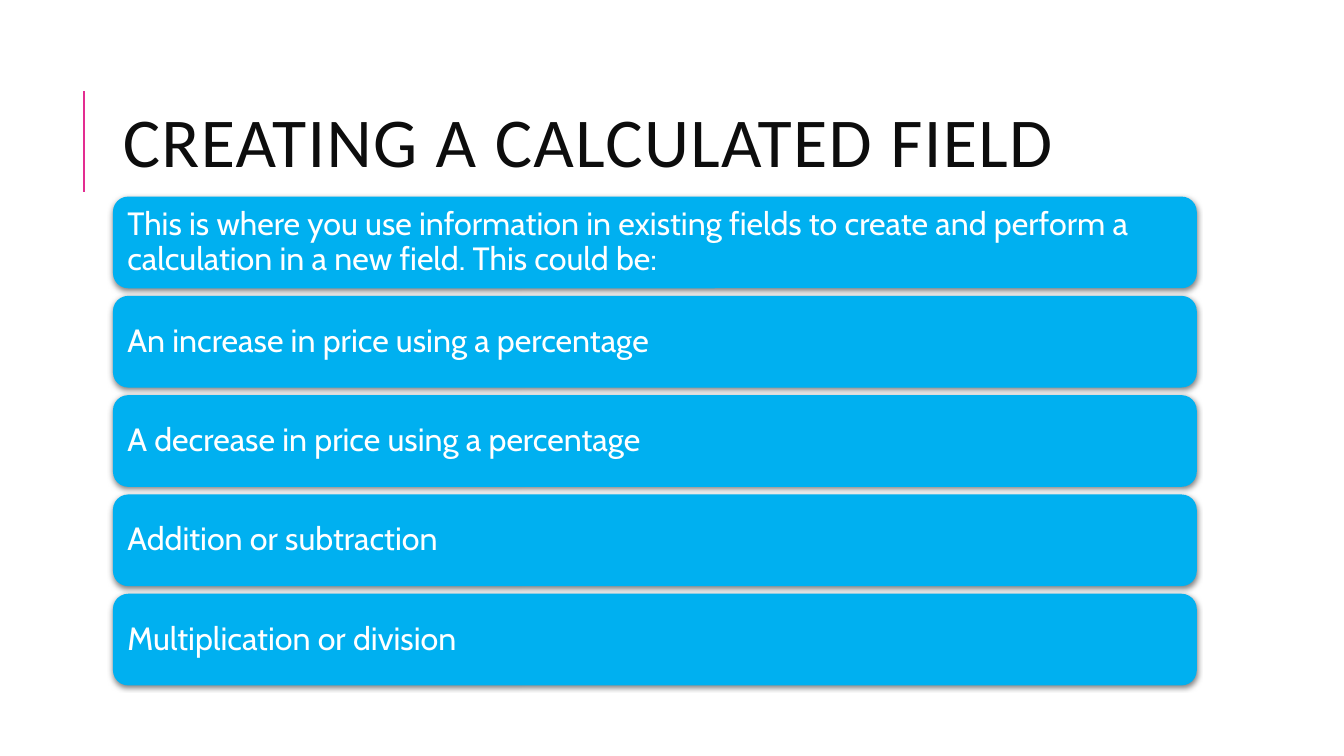
from lxml import etree
from pptx import Presentation
from pptx.dml.color import RGBColor
from pptx.enum.shapes import MSO_CONNECTOR, MSO_SHAPE
from pptx.enum.text import MSO_ANCHOR, PP_ALIGN
from pptx.oxml import parse_xml
from pptx.oxml.ns import nsdecls, qn
from pptx.util import Inches, Pt

TITLE = "CREATING A CALCULATED FIELD"
STATEMENTS = [
    "This is where you use information in existing fields to create and perform a "
    "calculation in a new field. This could be:",
    "An increase in price using a percentage",
    "A decrease in price using a percentage",
    "Addition or subtraction",
    "Multiplication or division",
]

THEME = {
    "accent": RGBColor.from_string("E32D91"),
    "panel": RGBColor.from_string("00B0F0"),
    "title": {"name": "Calibri", "size": Pt(50), "color": RGBColor.from_string("0D0D0D")},
    "statement": {"name": "Cabin", "size": Pt(23), "color": RGBColor.from_string("FFFFFF")},
}

LEFT = 1.12
PANEL_TOP, PANEL_WIDTH, PANEL_HEIGHT = 1.95, 10.75, 0.91
PANEL_PITCH = 0.985
MARGIN = Inches(0.1)

SHADOW = (
    f'<a:effectLst {nsdecls("a")}>'
    f'<a:outerShdw blurRad="{Pt(4)}" dist="{Pt(1)}" dir="5400000" rotWithShape="0">'
    '<a:srgbClr val="000000"><a:alpha val="50000"/></a:srgbClr>'
    '</a:outerShdw></a:effectLst>'
)


def write(shape, text, font_format, paragraph_format, frame_format):
    frame = shape.text_frame
    frame_format = {"word_wrap": True, "vertical_anchor": MSO_ANCHOR.MIDDLE, **frame_format}
    for name, value in frame_format.items():
        setattr(frame, name, value)
    paragraph = frame.paragraphs[0]
    for name, value in {"alignment": PP_ALIGN.LEFT, **paragraph_format}.items():
        setattr(paragraph, name, value)
    run = paragraph.add_run()
    run.text = text
    run.font.name = font_format["name"]
    run.font.size = font_format["size"]
    run.font.color.rgb = font_format["color"]
    return run


def add_title(slide):
    rule = slide.shapes.add_connector(
        MSO_CONNECTOR.STRAIGHT, Inches(0.83), Inches(1.9), Inches(0.83), Inches(0.9))
    rule.line.color.rgb = THEME["accent"]
    rule.line.width = Pt(1.5)
    etree.SubElement(rule._element.spPr, qn("a:effectLst"))

    heading = slide.shapes.add_textbox(
        Inches(LEFT), Inches(0.64), Inches(10.63), Inches(1.64))
    run = write(heading, TITLE, THEME["title"], {"line_spacing": 0.8}, {})
    run.font._element.set("spc", "100")


def add_panel(slide, index, statement):
    panel = slide.shapes.add_shape(
        MSO_SHAPE.ROUNDED_RECTANGLE,
        Inches(LEFT), Inches(PANEL_TOP + index * PANEL_PITCH),
        Inches(PANEL_WIDTH), Inches(PANEL_HEIGHT))
    panel.fill.solid()
    panel.fill.fore_color.rgb = THEME["panel"]
    panel.line.fill.background()
    panel._element.spPr.append(parse_xml(SHADOW))
    margins = {f"margin_{side}": MARGIN for side in ("left", "top", "right", "bottom")}
    write(panel, statement, THEME["statement"],
          {"line_spacing": 0.9, "space_after": Pt(8)}, margins)


def main():
    presentation = Presentation()
    presentation.slide_width = Inches(13.33)
    presentation.slide_height = Inches(7.5)
    slide = presentation.slides.add_slide(presentation.slide_layouts[6])
    add_title(slide)
    for index, statement in enumerate(STATEMENTS):
        add_panel(slide, index, statement)
    presentation.save("out.pptx")


if __name__ == "__main__":
    main()
